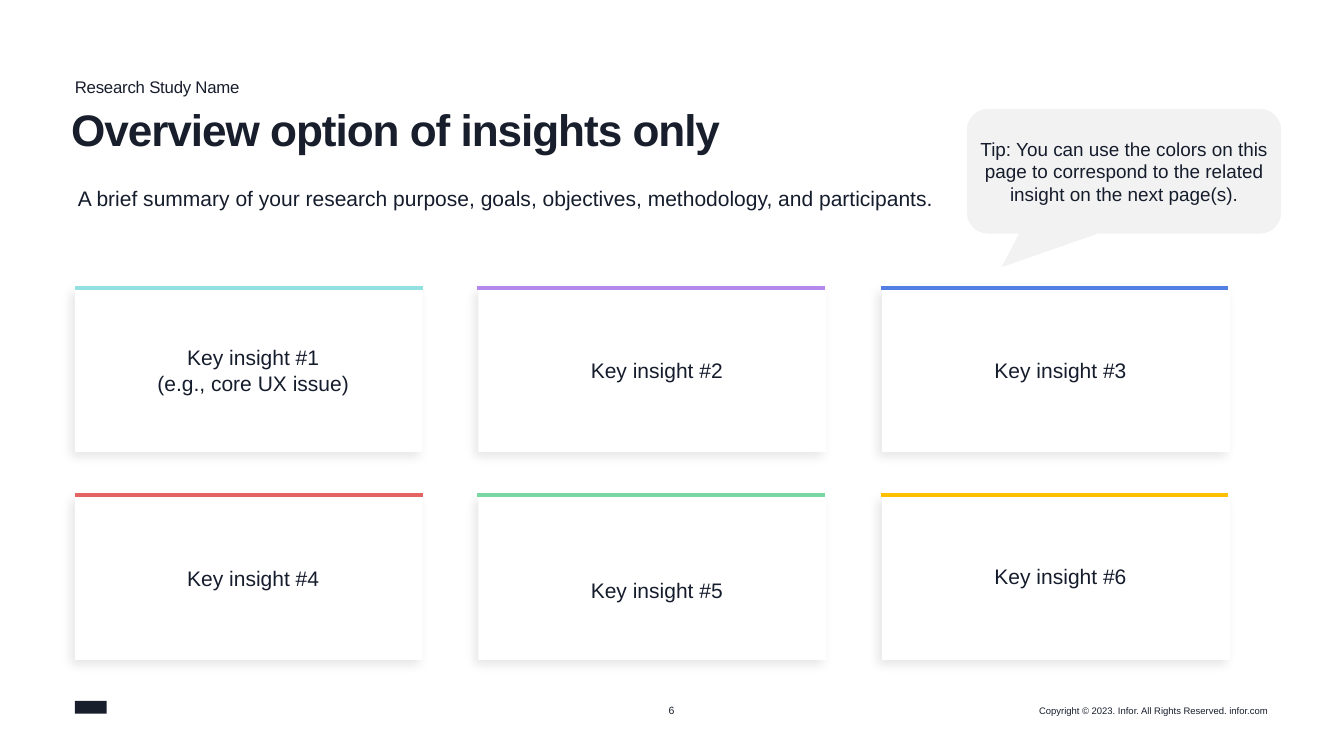
import pptx
import pptx.dml.color
import pptx.enum.shapes
import pptx.enum.text
import pptx.oxml
import pptx.oxml.ns
import pptx.util

Pt = pptx.util.Pt
RGB = pptx.dml.color.RGBColor.from_string
SHAPE = pptx.enum.shapes.MSO_SHAPE
ALIGN = pptx.enum.text.PP_ALIGN
ANCHOR = pptx.enum.text.MSO_ANCHOR

COLORS = {
    "paper": "FFFFFF", "ink": "181E2C", "body": "151C2C", "tip": "F2F2F2",
    "aqua": "93E0E0", "violet": "B389EC", "blue": "537EE3",
    "red": "E46464", "green": "78D7A3", "amber": "FFC000",
}
CARD_SHADOW = (
    f'<a:effectLst {pptx.oxml.ns.nsdecls("a")}>'
    '<a:outerShdw blurRad="127000" dist="63500" dir="8100000" algn="tr" rotWithShape="0">'
    '<a:srgbClr val="000000"><a:alpha val="10000"/></a:srgbClr>'
    '</a:outerShdw></a:effectLst>'
)

deck = pptx.Presentation()
deck.slide_width, deck.slide_height = Pt(1280.16), Pt(720)
slide = deck.slides.add_slide(deck.slide_layouts[6])


def write(holder, lines, size, color, align=ALIGN.LEFT, anchor=ANCHOR.TOP,
          insets=(0, 0, 0, 0), wrap=True, bold=False, line_spacing=None, tracking=None):
    """Fill a shape with paragraphs; insets run left, top, right, bottom; tracking is in points."""
    frame = holder.text_frame
    frame.word_wrap = wrap
    frame.vertical_anchor = anchor
    (frame.margin_left, frame.margin_top,
     frame.margin_right, frame.margin_bottom) = map(Pt, insets)
    frame.text = "\n".join(lines)
    for paragraph in frame.paragraphs:
        paragraph.alignment = align
        if line_spacing:
            paragraph.line_spacing = line_spacing
        font = paragraph.font
        font.name, font.size, font.bold = "Arial", Pt(size), bold
        font.color.rgb = RGB(COLORS[color])
        if tracking:
            for run in paragraph.runs:
                run.font.size = Pt(size)
                run.font._element.set("spc", str(round(tracking * 100)))


def add_panel(kind, left, top, width, height, fill):
    panel = slide.shapes.add_shape(kind, Pt(left), Pt(top), Pt(width), Pt(height))
    panel.shadow.inherit = False
    panel.fill.solid()
    panel.fill.fore_color.rgb = RGB(COLORS[fill])
    panel.line.fill.background()
    return panel


# Footer, with a plain bar in the logo's place
add_panel(SHAPE.RECTANGLE, 71.28, 667.44, 30.24, 12.24, "ink")
copyright_line = slide.shapes.add_textbox(Pt(985.68), Pt(671.04), Pt(221.76), Pt(10.8))
write(copyright_line, ["Copyright © 2023. Infor. All Rights Reserved. infor.com"],
      9, "ink", ALIGN.RIGHT, ANCHOR.MIDDLE, wrap=False)
page_number = slide.shapes.add_textbox(Pt(633.6), Pt(670.32), Pt(12.24), Pt(12.24))
write(page_number, ["6"], 10, "ink", ALIGN.CENTER, ANCHOR.MIDDLE, wrap=False)

# Heading
summary = add_panel(SHAPE.RECTANGLE, 59.76, 172.8, 1167.84, 86.4, "paper")
write(summary, ["A brief summary of your research purpose, goals, objectives, "
                "methodology, and participants."],
      20, "body", insets=(14.4, 3.6, 14.4, 3.6))
title = slide.shapes.add_textbox(Pt(67.68), Pt(103.68), Pt(1138.32), Pt(86.4))
write(title, ["Overview option of insights only"], 42, "ink",
      bold=True, line_spacing=0.9, tracking=-1)
study_name = slide.shapes.add_textbox(Pt(71.28), Pt(72), Pt(1136.88), Pt(16.56))
write(study_name, ["Research Study Name"], 16, "ink", line_spacing=1.05, tracking=-0.2)

# Insight cards: lines, accent colour, top inset, bottom inset
insights = [
    (["Key insight #1", "(e.g., core UX issue)"], "aqua", 21.6, 21.6),
    (["Key insight #2"], "violet", 21.6, 21.6),
    (["Key insight #3"], "blue", 21.6, 21.6),
    (["Key insight #4"], "red", 21.6, 21.6),
    (["Key insight #5"], "green", 45.6, 21.6),
    (["Key insight #6"], "amber", 21.6, 25),
]
CARD_WIDTH, CARD_HEIGHT = 331.2, 156.24
for index, (lines, accent, inset_top, inset_bottom) in enumerate(insights):
    row, column = divmod(index, 3)
    left, top = 71.28 + column * 384.48, 274.32 + row * 198
    card = add_panel(SHAPE.RECTANGLE, left, top, CARD_WIDTH, CARD_HEIGHT, "paper")
    properties = card._element.spPr
    properties.remove(properties.find(pptx.oxml.ns.qn("a:effectLst")))
    properties.append(pptx.oxml.parse_xml(CARD_SHADOW))
    write(card, lines, 20, "body", ALIGN.CENTER, ANCHOR.MIDDLE,
          insets=(48.24, inset_top, 39.6, inset_bottom))

    bar_left = left - (1.44 if column else 0)
    bar_top = top - row * 0.72
    bar = slide.shapes.add_connector(
        pptx.enum.shapes.MSO_CONNECTOR.STRAIGHT,
        Pt(bar_left), Pt(bar_top), Pt(bar_left + CARD_WIDTH), Pt(bar_top))
    bar.line.color.rgb = RGB(COLORS[accent])
    bar.line.width = Pt(4)
    bar._element.spPr.append(
        pptx.oxml.parse_xml(f'<a:effectLst {pptx.oxml.ns.nsdecls("a")}/>'))

# Tip
tip = add_panel(SHAPE.ROUNDED_RECTANGULAR_CALLOUT, 920.88, 103.68, 299.52, 118.8, "tip")
for position, value in enumerate((-0.39, 0.77, 0.17)):
    tip.adjustments[position] = value
write(tip, ["Tip: You can use the colors on this page to correspond to the "
            "related insight on the next page(s)."],
      18, "body", ALIGN.CENTER, ANCHOR.MIDDLE, insets=(7.2, 3.6, 7.2, 3.6))

deck.save("out.pptx")
